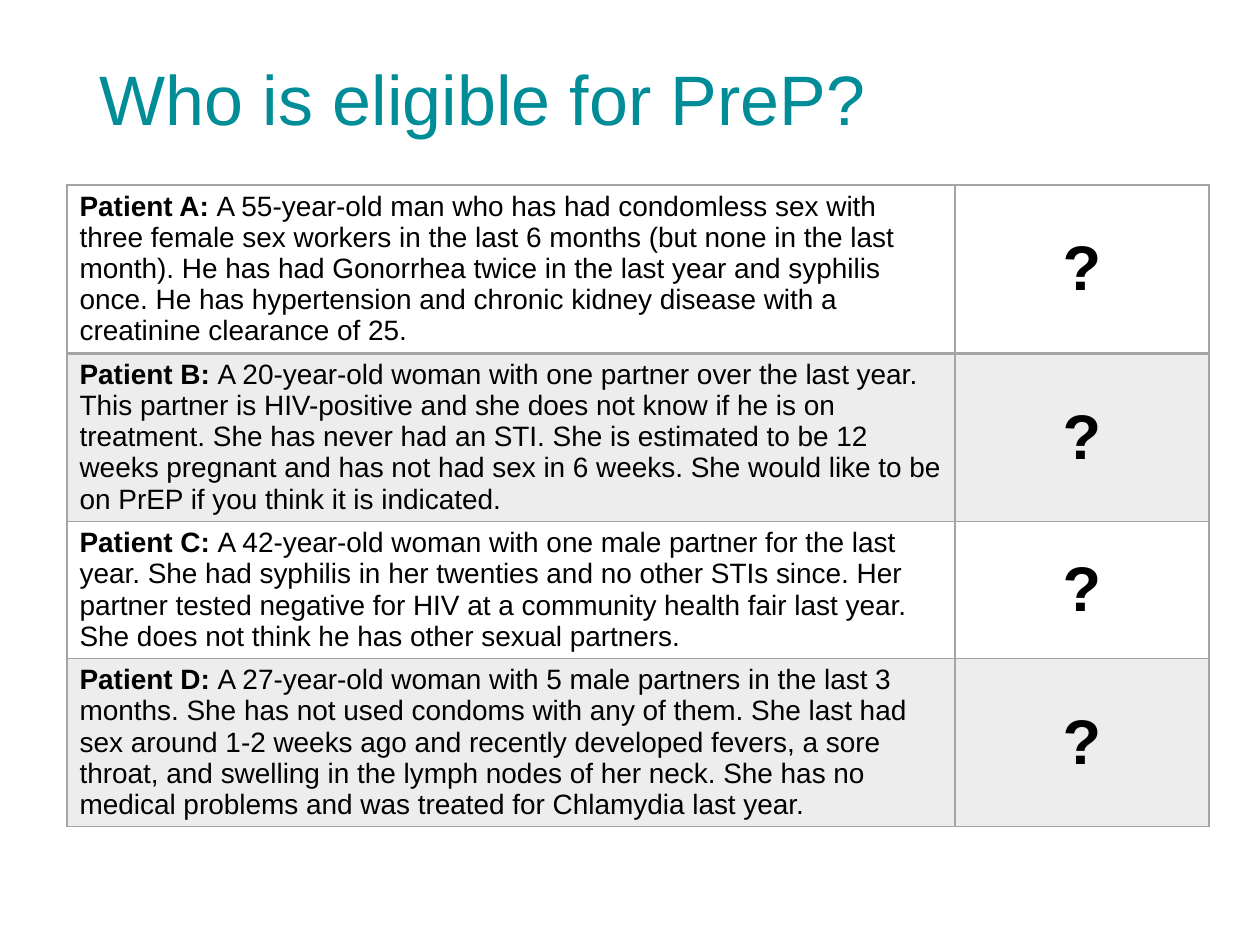
from dataclasses import dataclass

from lxml.etree import SubElement
from pptx import Presentation
from pptx.dml.color import RGBColor
from pptx.enum.text import MSO_ANCHOR as Anchor, PP_ALIGN as Align
from pptx.oxml.ns import qn
from pptx.util import Emu, Pt

PX_PER_INCH = 126
GRAY = "A5A5A5"
BLACK = "000000"
TEAL = "008D98"


@dataclass(frozen=True)
class Patient:
    """One case in the table."""
    name: str
    history: str
    height: int
    shaded: bool = False


PATIENTS = [
    Patient("Patient A: ", "A 55-year-old man who has had condomless sex with three female sex workers in the "
            "last 6 months (but none in the last month). He has had Gonorrhea twice in the last year and "
            "syphilis once. He has hypertension and chronic kidney disease with a creatinine clearance of 25.",
            168),
    Patient("Patient B: ", "A 20-year-old woman with one partner over the last year. This partner is "
            "HIV-positive and she does not know if he is on treatment. She has never had an STI. She is "
            "estimated to be 12 weeks pregnant and has not had sex in 6 weeks. She would like to be on PrEP "
            "if you think it is indicated.", 168, True),
    Patient("Patient C: ", "A 42-year-old woman with one male partner for the last year. She had syphilis in "
            "her twenties and no other STIs since. Her partner tested negative for HIV at a community health "
            "fair last year. She does not think he has other sexual partners.", 137),
    Patient("Patient D: ", "A 27-year-old woman with 5 male partners in the last 3 months. She has not used "
            "condoms with any of them. She last had sex around 1-2 weeks ago and recently developed fevers, "
            "a sore throat, and swelling in the lymph nodes of her neck. She has no medical problems and was "
            "treated for Chlamydia last year.", 168, True),
]


def px(length: int) -> Emu:
    """Turn pixels into EMU."""
    return Emu(round(length * 914400 / PX_PER_INCH))


def color(value: str) -> RGBColor:
    """Turn a hex string into a colour."""
    return RGBColor.from_string(value)


def set_all(target, values: dict) -> None:
    """Set each named attribute of the target."""
    for name, value in values.items():
        setattr(target, name, value)


def add_span(para, text: str, size: int, bold: bool = False, hue: str = BLACK) -> None:
    """Append formatted text to a paragraph."""
    span = para.add_run()
    span.text = text
    set_all(span.font, {"name": "Arial", "size": Pt(size), "bold": bold})
    span.font.color.rgb = color(hue)


def style_cell(cell, shaded: bool, top: int, bottom: int) -> None:
    """Draw the borders and the fill of a cell."""
    props = cell._tc.get_or_add_tcPr()
    for side, width in {"L": 1, "R": 1, "T": top, "B": bottom}.items():
        line = SubElement(props, qn(f"a:ln{side}"), w=str(Pt(width)))
        SubElement(SubElement(line, qn("a:solidFill")), qn("a:srgbClr"), val=GRAY)
    if shaded:
        cell.fill.solid()
        cell.fill.fore_color.rgb = color(GRAY)
        SubElement(props.find(qn("a:solidFill"))[0], qn("a:alpha"), val="20000")
    else:
        cell.fill.background()


def add_title(page, text: str) -> None:
    """Place and format the title."""
    box = page.shapes.title
    set_all(box, {"left": px(87), "top": px(50), "width": px(1086), "height": px(106)})
    box.text_frame.vertical_anchor = Anchor.MIDDLE
    para = box.text_frame.paragraphs[0]
    set_all(para, {"alignment": Align.LEFT, "line_spacing": 0.9})
    add_span(para, text, 40, hue=TEAL)


def add_cases(page, patients: list[Patient]) -> None:
    """Draw the table with one row per patient."""
    widths = (888, 254)
    total = sum(patient.height for patient in patients)
    table = page.shapes.add_table(len(patients), len(widths), px(67), px(185),
                                  px(sum(widths)), px(total)).table
    set_all(table, {"first_row": False, "horz_banding": False})
    for column, width in zip(table.columns, widths):
        column.width = px(width)
    for index, patient in enumerate(patients):
        table.rows[index].height = px(patient.height)
        case, answer = table.rows[index].cells
        for cell in (case, answer):
            style_cell(cell, patient.shaded, 2 if index == 1 else 1, 2 if index == 0 else 1)
        para = case.text_frame.paragraphs[0]
        add_span(para, patient.name, 16, bold=True)
        add_span(para, patient.history, 16)
        answer.vertical_anchor = Anchor.MIDDLE
        para = answer.text_frame.paragraphs[0]
        para.alignment = Align.CENTER
        add_span(para, "?", 36, bold=True)


def main() -> None:
    """Build and save the deck."""
    deck = Presentation()
    set_all(deck, {"slide_width": px(1260), "slide_height": px(945)})
    page = deck.slides.add_slide(deck.slide_layouts[5])
    add_title(page, "Who is eligible for PreP?")
    add_cases(page, PATIENTS)
    deck.save("out.pptx")


if __name__ == "__main__":
    main()
